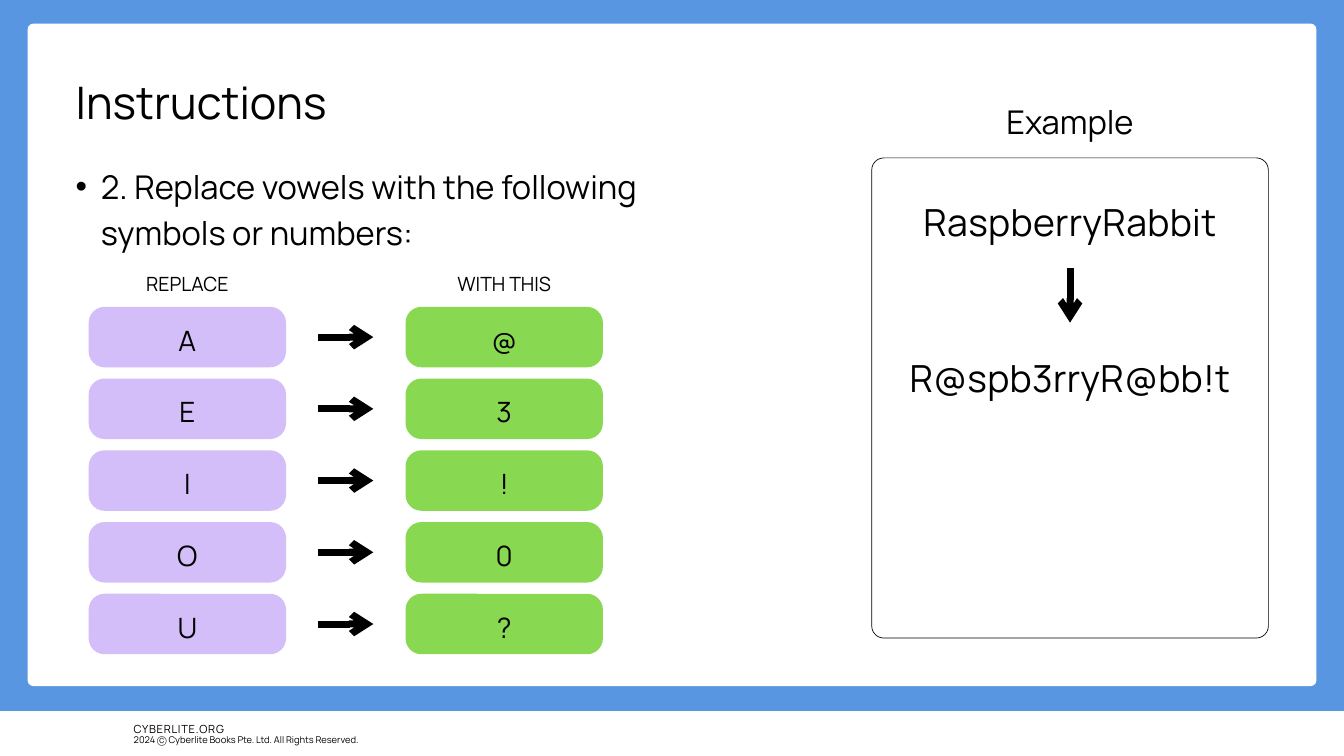
"""Builds the vowel replacement instruction slide."""
import pptx
import pptx.dml.color
import pptx.enum.shapes
import pptx.enum.text
import pptx.oxml
import pptx.oxml.ns
import pptx.util

Pt = pptx.util.Pt
ALIGN = pptx.enum.text.PP_ALIGN
ANCHOR = pptx.enum.text.MSO_ANCHOR
SHAPE = pptx.enum.shapes.MSO_SHAPE
COLORS = {"blue": "5996E2", "white": "FFFFFF", "black": "000000",
          "lilac": "D4BEFA", "green": "88D852"}
FONT = "Manrope"
SWAPS = [("A", "@"), ("E", "3"), ("I", "!"), ("O", "0"), ("U", "?")]


def rgb(name):
    """Return the named colour."""
    return pptx.dml.color.RGBColor.from_string(COLORS[name])


def write(sp, text, size, align=ALIGN.LEFT, anchor=ANCHOR.TOP, spacing=0, margin=0, gap=0):
    """Fill a shape with text whose lines are 1.4 times the font size."""
    tf = sp.text_frame
    tf.text = text
    tf.word_wrap = True
    tf.auto_size = pptx.enum.text.MSO_AUTO_SIZE.NONE
    tf.vertical_anchor = anchor
    tf.margin_left = tf.margin_top = tf.margin_right = tf.margin_bottom = Pt(margin)
    for i, p in enumerate(tf.paragraphs):
        p.alignment = align
        p.line_spacing = Pt(size * 1.4)
        p.space_before = Pt(gap if i else 0)
        for r in p.runs:
            r.font.name = FONT
            r.font.size = Pt(size)
            r.font.color.rgb = rgb("black")
            if spacing:
                r.font._element.set("spc", str(round(spacing * 100)))


def add_text(slide, box, text, size, **style):
    """Add a text box."""
    sp = slide.shapes.add_textbox(*map(Pt, box))
    write(sp, text, size, **style)


def add_box(slide, box, fill, radius=0, line=None):
    """Add a rectangle, rounded when a radius is given."""
    kind = SHAPE.ROUNDED_RECTANGLE if radius else SHAPE.RECTANGLE
    sp = slide.shapes.add_shape(kind, *map(Pt, box))
    sp.shadow.inherit = False
    sp.fill.solid()
    sp.fill.fore_color.rgb = rgb(fill)
    if radius:
        sp.adjustments[0] = radius / min(box[2:])
    if line:
        sp.line.color.rgb = rgb("black")
        sp.line.width = Pt(line)
    else:
        sp.line.fill.background()
    return sp


def add_arrow(slide, x1, y1, x2, y2):
    """Add a thick black arrow."""
    cx = slide.shapes.add_connector(
        pptx.enum.shapes.MSO_CONNECTOR.STRAIGHT, Pt(x1), Pt(y1), Pt(x2), Pt(y2))
    cx.line.color.rgb = rgb("black")
    cx.line.width = Pt(7.5)
    ns = pptx.oxml.ns.nsdecls("a")
    cx.line._get_or_add_ln().append(pptx.oxml.parse_xml(f'<a:tailEnd {ns} type="arrow"/>'))
    cx.element.spPr.append(pptx.oxml.parse_xml(f"<a:effectLst {ns}/>"))


def place_placeholder(slide, sp, box, text, size):
    """Move a placeholder to the front and set its text without a bullet."""
    slide.shapes.element.append(sp.element)
    sp.left, sp.top, sp.width, sp.height = map(Pt, box)
    sp.text_frame.text = text
    pPr = sp.text_frame.paragraphs[0]._p.get_or_add_pPr()
    pPr.set("marL", "0")
    pPr.set("indent", "0")
    pPr.append(pptx.oxml.parse_xml(f'<a:buNone {pptx.oxml.ns.nsdecls("a")}/>'))
    write(sp, text, size)


def add_footer(slide, x, y, w, h):
    """Add the white strip with the address and the copyright line."""
    add_box(slide, (x, y, w, h), "white")
    add_text(slide, (x + 143.3, y + 10, 334, 17), "CYBERLITE.ORG", 12, spacing=0.8)
    add_text(slide, (x + 143.3, y + 23, 334, 14),
             "2024 Ⓒ Cyberlite Books Pte. Ltd. All Rights Reserved.", 10)


def add_heading(slide, x, y, w):
    """Place the title and the instruction under it."""
    title, body = slide.placeholders
    place_placeholder(slide, title, (x, y, w, 68), "Instructions", 48)
    place_placeholder(slide, body, (x, y + 101.5, w, 98),
                      "2. Replace vowels with the following symbols or numbers:", 35)


def add_swaps(slide, x, y, w, h):
    """Add the two columns of pills with an arrow in each row."""
    pill_w, pill_h, head_h = 211.5, 64.8, 41.5
    pitch = (h - head_h - pill_h) / (len(SWAPS) - 1)
    columns = [(x, "REPLACE", "lilac"), (x + w - pill_w, "WITH THIS", "green")]
    for col, (left, head, color) in enumerate(columns):
        add_text(slide, (left, y, pill_w, 30), head, 21, align=ALIGN.CENTER)
        for row, pair in enumerate(SWAPS):
            top = y + head_h + row * pitch
            sp = add_box(slide, (left, top, pill_w, pill_h), color, 17)
            write(sp, pair[col], 30, align=ALIGN.CENTER, anchor=ANCHOR.MIDDLE,
                  spacing=0.3, margin=4)
    for row in range(len(SWAPS)):
        mid = y + head_h + row * pitch + pill_h / 2
        add_arrow(slide, x + 246, mid, x + 305, mid)


def add_example(slide, x, y, w, h):
    """Add the example panel with its label and arrow."""
    add_text(slide, (x, y, w, 49), "Example", 35, align=ALIGN.CENTER)
    add_box(slide, (x, y + 67, w, h - 67), "white", 13, 0.75)
    add_text(slide, (x, y + 98.7, w, h - 98.7), "RaspberryRabbit\nR@spb3rryR@bb!t", 40,
             align=ALIGN.CENTER, spacing=0.4, margin=4, gap=112)
    add_arrow(slide, x + w / 2, y + 185, x + w / 2, y + 243.5)


def main():
    """Build and save the slide."""
    prs = pptx.Presentation()
    prs.slide_width, prs.slide_height = Pt(1440), Pt(810)
    slide = prs.slides.add_slide(prs.slide_layouts[1])
    slide.background.fill.solid()
    slide.background.fill.fore_color.rgb = rgb("blue")
    add_footer(slide, 0, 762, 1440, 48)
    add_box(slide, (29.5, 25.2, 1381, 710), "white", 6.5)
    add_heading(slide, 81, 70, 694)
    add_swaps(slide, 95, 287.3, 551, 413.7)
    add_example(slide, 934, 102.2, 425, 581.5)
    prs.save("out.pptx")


if __name__ == "__main__":
    main()
